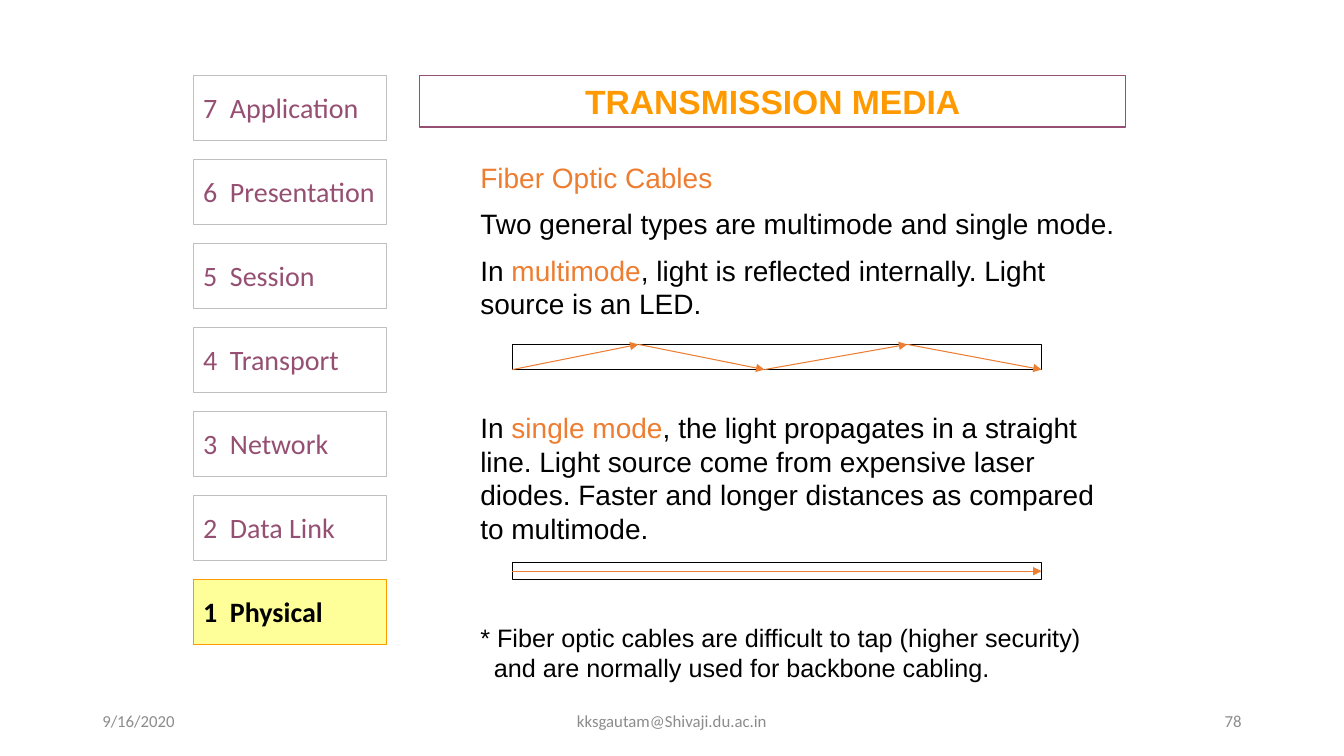
from pptx import Presentation, util as u
from pptx.dml.color import RGBColor
from pptx.enum import shapes, text
from pptx.oxml.ns import qn
from lxml import etree

PX = 9525
ORANGE, PLUM, GOLD, BLACK, GRAY = "ED7D31", "954F72", "FF9900", "000000", "8C8C8C"
LEFT, MID, RIGHT = text.PP_ALIGN.LEFT, text.PP_ALIGN.CENTER, text.PP_ALIGN.RIGHT
LAYERS = ["Application", "Presentation", "Session", "Transport",
          "Network", "Data Link", "Physical"]
# Each paragraph: runs of (text, colour), space before in pt, size, indent in px
BODY = [
    ([("Fiber Optic Cables", ORANGE)], 0, 20, 48),
    ([("Two general types are multimode and single mode.", BLACK)], 9.2, 20, 48),
    ([("In ", BLACK), ("multimode", ORANGE),
      (", light is reflected internally. Light source is an LED.", BLACK)], 9.2, 20, 48),
    ([("In ", BLACK), ("single mode", ORANGE),
      (", the light propagates in a straight line. Light source come from expensive "
       "laser diodes. Faster and longer distances as compared to multimode.", BLACK)],
     64.4, 20, 48),
    ([("* Fiber optic cables are difficult to tap (higher security)", BLACK)], 55.2, 18, 48),
    ([("and are normally used for backbone cabling.", BLACK)], 0, 18, 61),
]


def px(*sizes):
    return [u.Emu(size * PX) for size in sizes]


def rgb(code):
    return RGBColor.from_string(code)


def write(para, words, size=20, font="Arial", color=BLACK, bold=False, align=LEFT):
    para.alignment = align
    run = para.add_run()
    run.text = words
    run.font.size = u.Pt(size)
    run.font.name = font
    run.font.bold = bold
    run.font.color.rgb = rgb(color)


def outline(shape, color):
    shape.line.color.rgb = rgb(color)
    shape.line.width = u.Pt(0.75)


def box(slide, place, line, fill=None):
    shape = slide.shapes.add_shape(shapes.MSO_SHAPE.RECTANGLE, *px(*place))
    shape.shadow.inherit = False
    outline(shape, line)
    if fill:
        shape.fill.solid()
        shape.fill.fore_color.rgb = rgb(fill)
    else:
        shape.fill.background()
    return shape


def label(slide, place, anchor=text.MSO_ANCHOR.TOP):
    frame = slide.shapes.add_textbox(*px(*place)).text_frame
    frame.word_wrap = True
    frame.vertical_anchor = anchor
    return frame


def arrow(slide, start, end):
    line = slide.shapes.add_connector(shapes.MSO_CONNECTOR.STRAIGHT, *px(*start, *end))
    outline(line, ORANGE)
    etree.SubElement(line.line._get_or_add_ln(), qn("a:tailEnd"), type="triangle")
    etree.SubElement(line._element.spPr, qn("a:effectLst"))
    return line


def heading(slide):
    title = slide.shapes.title
    title.left, title.top, title.width, title.height = px(400, 72, 672, 49)
    outline(title, PLUM)
    frame = title.text_frame
    frame.auto_size = text.MSO_AUTO_SIZE.NONE
    frame.vertical_anchor = text.MSO_ANCHOR.TOP
    write(frame.paragraphs[0], "TRANSMISSION MEDIA", 24, color=GOLD, bold=True, align=MID)


def stack(slide):
    """Draw the seven network layers, with the lowest one marked."""
    for row, name in enumerate(LAYERS):
        low = name == "Physical"
        shape = box(slide, (184, 72 + 80 * row, 184, 62),
                    GOLD if low else "C0C0C0", "FFFF99" if low else None)
        frame = shape.text_frame
        frame.margin_top = frame.margin_bottom = u.Inches(0.15)
        frame.vertical_anchor = text.MSO_ANCHOR.TOP
        write(frame.paragraphs[0], f"{len(LAYERS) - row}  {name}", font="Calibri",
              color=BLACK if low else PLUM, bold=low)


def body(slide):
    frame = label(slide, (400, 148, 672, 516))
    for row, (runs, gap, size, indent) in enumerate(BODY):
        para = frame.add_paragraph() if row else frame.paragraphs[0]
        para.space_before = u.Pt(gap)
        para._p.get_or_add_pPr().set("marL", str(indent * PX))
        for words, color in runs:
            write(para, words, size, color=color)


def cables(slide):
    box(slide, (488, 328, 504, 24), BLACK)
    turns = [(488, 352), (608, 328), (728, 352), (864, 328), (992, 352)]
    for start, end in zip(turns, turns[1:]):
        arrow(slide, start, end)
    single = box(slide, (488, 536, 504, 16), BLACK)
    beam = arrow(slide, (488, 544), (992, 544))
    beam.begin_connect(single, 1)
    beam.end_connect(single, 3)


def footer(slide):
    for left, width, words, align in [(88, 288, "9/16/2020", LEFT),
                                      (424, 432, "kksgautam@Shivaji.du.ac.in", MID),
                                      (904, 288, "78", RIGHT)]:
        frame = label(slide, (left, 667, width, 38), text.MSO_ANCHOR.MIDDLE)
        write(frame.paragraphs[0], words, 12, "Calibri", GRAY, align=align)


def main():
    deck = Presentation()
    deck.slide_width, deck.slide_height = px(1280, 720)
    slide = deck.slides.add_slide(deck.slide_layouts[5])
    heading(slide)
    stack(slide)
    body(slide)
    cables(slide)
    footer(slide)
    deck.save("out.pptx")


if __name__ == "__main__":
    main()
